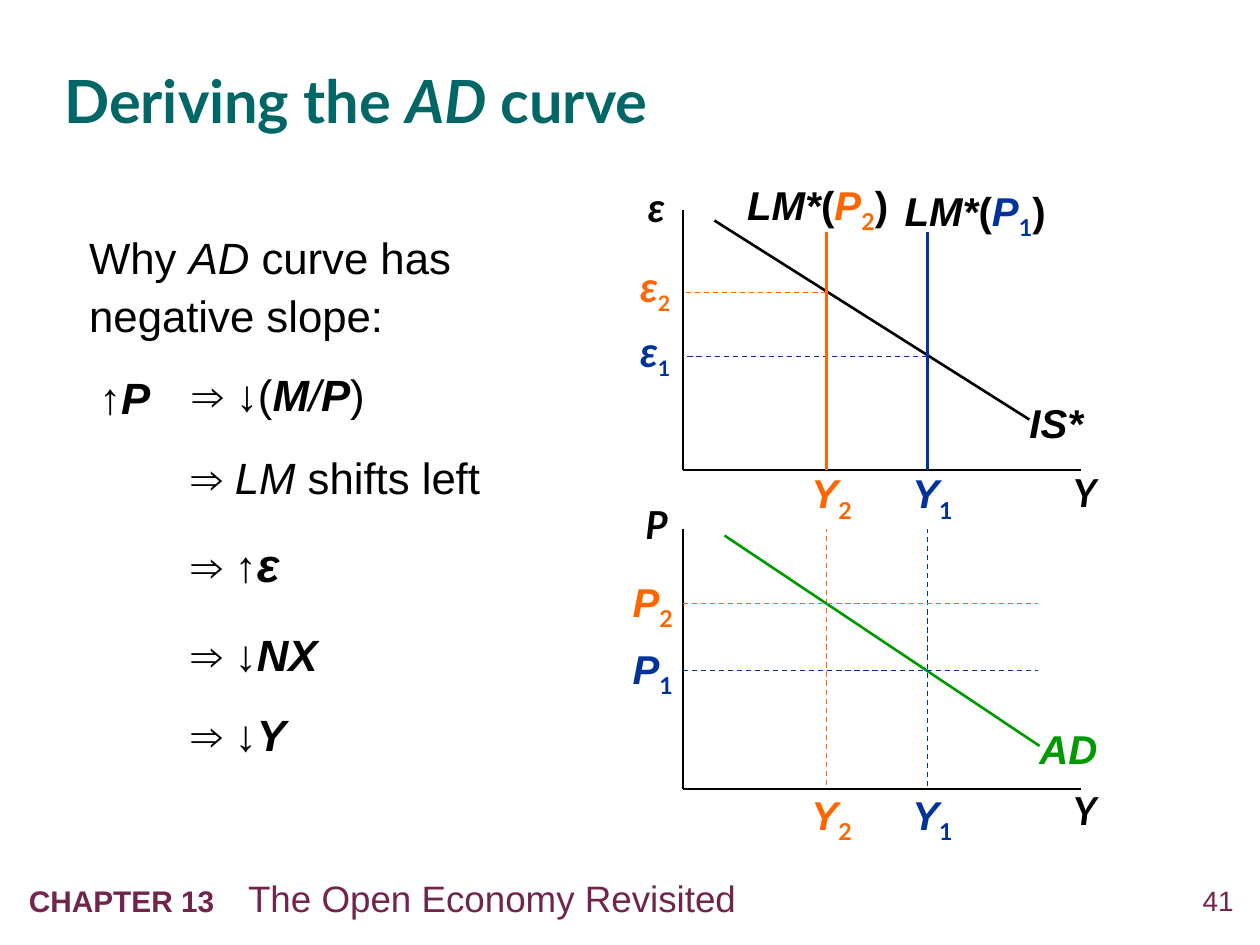
from dataclasses import dataclass, replace

from lxml.etree import SubElement
from pptx import Presentation
from pptx.dml.color import RGBColor
from pptx.enum.dml import MSO_LINE
from pptx.enum.shapes import MSO_CONNECTOR
from pptx.enum.text import MSO_ANCHOR, PP_ALIGN
from pptx.oxml.ns import qn
from pptx.util import Inches, Pt


@dataclass(frozen=True)
class Theme:
    """Colours, fonts and type sizes of the slide."""
    ink: str = "000000"
    paper: str = "FFFFFF"
    teal: str = "006666"
    plum: str = "71254B"
    blue: str = "003399"
    orange: str = "FF6600"
    green: str = "009900"
    sans: str = "Arial"
    head: str = "Lato"
    title: int = 34
    body: int = 25
    label: int = 23
    axis: int = 22
    thin: float = 0.75
    rule: float = 1
    bold: float = 1.5


@dataclass(frozen=True)
class Span:
    """A piece of text with one format."""
    text: str
    size: float
    color: str = "000000"
    font: str = "Arial"
    bold: bool = False
    slant: bool = False
    sub: bool = False


@dataclass(frozen=True)
class Level:
    """One price level and where its lines fall."""
    mark: str
    color: str
    x: float
    rate: float
    price: float
    money: tuple


@dataclass(frozen=True)
class Panel:
    """One pair of axes with its curve."""
    name: Span
    top: float
    start: tuple
    end: tuple
    color: str
    curve: str


T = Theme()
LEFT, RIGHT, TALL = 5.42, 8.58, 2.06
LEVELS = (
    Level("1", T.blue, 7.36, 2.83, 5.32, (7.18, 1.48, 1.16, 0.38)),
    Level("2", T.orange, 6.56, 2.32, 4.79, (5.93, 1.43, 1.2, 0.38)),
)
BODY = Span("", T.body)
TERM = replace(BODY, slant=True)
KEY = replace(TERM, bold=True)
SIGN = Span("", T.label, bold=True, slant=True)
AXIS = replace(SIGN, size=T.axis, font=T.head)
PANELS = (
    Panel(replace(AXIS, text="ε", size=T.label), 1.67,
          (5.67, 1.75), (8.17, 3.33), T.ink, "IS*"),
    Panel(replace(AXIS, text="P"), 4.2,
          (5.75, 4.25), (8.25, 5.92), T.green, "AD"),
)
STEPS = (
    (3.49, (replace(BODY, text="⇒ "), replace(TERM, text="LM"), replace(BODY, text=" shifts left"))),
    (4.15, (replace(BODY, text="⇒ ↑"), replace(KEY, text="ε", size=27))),
    (4.89, (replace(BODY, text="⇒ ↓"), replace(KEY, text="NX"))),
    (5.53, (replace(BODY, text="⇒ ↓"), replace(KEY, text="Y"))),
)


def write(para, text: str, *, size: float, color: str, font: str,
          bold: bool = False, slant: bool = False, sub: bool = False) -> None:
    """Add a run of text in the given format."""
    run = para.add_run()
    run.text = text
    face = run.font
    face.size, face.name, face.bold, face.italic = Pt(size), font, bold, slant
    face.color.rgb = RGBColor.from_string(color)
    if sub:
        run._r.get_or_add_rPr().set("baseline", "-25000")


def fill(shape, spans: tuple, pad: tuple, align=PP_ALIGN.LEFT, space: float = 1):
    """Fill a shape with spans and return its paragraph."""
    frame = shape.text_frame
    frame.word_wrap = True
    frame.margin_left, frame.margin_top, frame.margin_right, frame.margin_bottom = map(Inches, pad)
    para = frame.paragraphs[0]
    para.alignment, para.line_spacing = align, space
    for span in spans:
        write(para, span.text, size=span.size, color=span.color, font=span.font,
              bold=span.bold, slant=span.slant, sub=span.sub)
    return para


def label(slide, spot: tuple, *spans: Span, pad: tuple = (0, 0, 0, 0), **style):
    """Place a text box and return it."""
    box = slide.shapes.add_textbox(*map(Inches, spot))
    fill(box, spans, pad, **style)
    return box


def line(slide, start: tuple, end: tuple, color: str, width: float, dash: bool = False) -> None:
    """Draw a straight line without a shadow."""
    rod = slide.shapes.add_connector(MSO_CONNECTOR.STRAIGHT, *map(Inches, start + end))
    rod.line.color.rgb = RGBColor.from_string(color)
    rod.line.width = Pt(width)
    if dash:
        rod.line.dash_style = MSO_LINE.DASH
    SubElement(rod._element.spPr, qn("a:effectLst"))


def signed(name: str, level: Level, font: str = T.sans, size: float = T.label,
           low: float = T.label) -> tuple:
    """Give a symbol and its index in the colour of the level."""
    head = Span(name, size, level.color, font, bold=True, slant=True)
    return head, replace(head, text=level.mark, size=low, font=T.head, slant=False, sub=True)


def frame(slide) -> None:
    """Set the title and the footer."""
    title = slide.shapes.title
    title.left, title.top, title.width, title.height = map(Inches, (0.51, 0.26, 9.02, 1.03))
    span = Span("Deriving the ", T.title, T.teal, T.head, bold=True)
    fill(title, (span, replace(span, text="AD", slant=True), replace(span, text=" curve")),
         (0, 0, 0, 0), space=1.05)
    title.text_frame.vertical_anchor = MSO_ANCHOR.MIDDLE
    label(slide, (9.24, 7.01, 0.55, 0.32), Span("41", 16, T.plum), align=PP_ALIGN.RIGHT)
    foot = label(slide, (0.13, 6.9, 8.18, 0.45), Span("CHAPTER 13\t", 17, T.plum, bold=True),
                 Span("The Open Economy Revisited", 21, T.plum), pad=(0.1, 0.05, 0.1, 0.05))
    props = foot.text_frame.paragraphs[0]._p.get_or_add_pPr()
    tabs = SubElement(props, qn("a:tabLst"))
    SubElement(tabs, qn("a:tab"), pos=str(Inches(1.74)), algn="l")


def graph(slide) -> None:
    """Draw both panels and the lines of each level."""
    floor = PANELS[0].top + TALL
    base = PANELS[1].top + TALL
    for level in LEVELS:
        line(slide, (level.x, level.rate), (level.x, base), level.color, T.thin, True)
    for level in LEVELS:
        box = label(slide, (level.x - 0.12, 3.72, 0.42, 0.48), *signed("Y", level))
        box.fill.solid()
        box.fill.fore_color.rgb = RGBColor.from_string(T.paper)
    pad = (0.1, 0.05, 0.1, 0.05)
    for panel in PANELS:
        low = panel.top + TALL
        line(slide, (LEFT, panel.top), (LEFT, low), T.ink, T.rule)
        line(slide, (LEFT, low), (RIGHT, low), T.ink, T.rule)
        label(slide, (8.42, low - 0.06, 0.58, 0.47), replace(AXIS, text="Y"), pad=pad)
        label(slide, (5, panel.top - 0.27, 0.42, 0.48), panel.name, pad=pad, align=PP_ALIGN.CENTER)
        line(slide, panel.start, panel.end, panel.color, T.bold)
        x, y = panel.end
        label(slide, (x, y - 0.17, 0.5, 0.38), replace(SIGN, text=panel.curve, color=panel.color))
    for level in LEVELS:
        paren = replace(SIGN, slant=False)
        label(slide, level.money, replace(SIGN, text="LM*"), replace(paren, text="("),
              *signed("P", level), replace(paren, text=")"))
        line(slide, (level.x, floor), (level.x, 1.84), level.color, T.bold)
        line(slide, (LEFT, level.price), (8.24, level.price), level.color, T.thin, True)
        label(slide, (5.02, level.price - 0.21, 0.42, 0.48), *signed("P", level))
        label(slide, (level.x - 0.12, 6.27, 0.42, 0.38), *signed("Y", level))
        line(slide, (level.x, level.rate), (LEFT, level.rate), level.color, T.thin, True)
        label(slide, (5.08, level.rate - 0.25, 0.42, 0.4), *signed("ε", level, T.head, 24, 21))


def reason(slide) -> None:
    """Write the chain of steps on the left."""
    style = {"pad": (0.1, 0.05, 0.1, 0.05), "space": 1.1}
    label(slide, (0.61, 1.74, 3.58, 1.08), replace(BODY, text="Why "), replace(TERM, text="AD"),
          replace(BODY, text=" curve has negative slope:"), **style)
    label(slide, (0.69, 2.85, 0.75, 0.58), replace(BODY, text="↑"), replace(KEY, text="P"), **style)
    label(slide, (1.43, 2.83, 1.83, 0.58), replace(BODY, text="⇒ ↓("), replace(KEY, text="M"),
          replace(TERM, text="/"), replace(KEY, text="P"), replace(BODY, text=")"), **style)
    for top, spans in STEPS:
        label(slide, (1.42, top, 2.64, 0.58), *spans, **style)


def main() -> None:
    """Build and save the slide."""
    deck = Presentation()
    deck.slide_width, deck.slide_height = Inches(10), Inches(7.5)
    slide = deck.slides.add_slide(deck.slide_layouts[5])
    frame(slide)
    graph(slide)
    reason(slide)
    deck.save("out.pptx")


if __name__ == "__main__":
    main()
